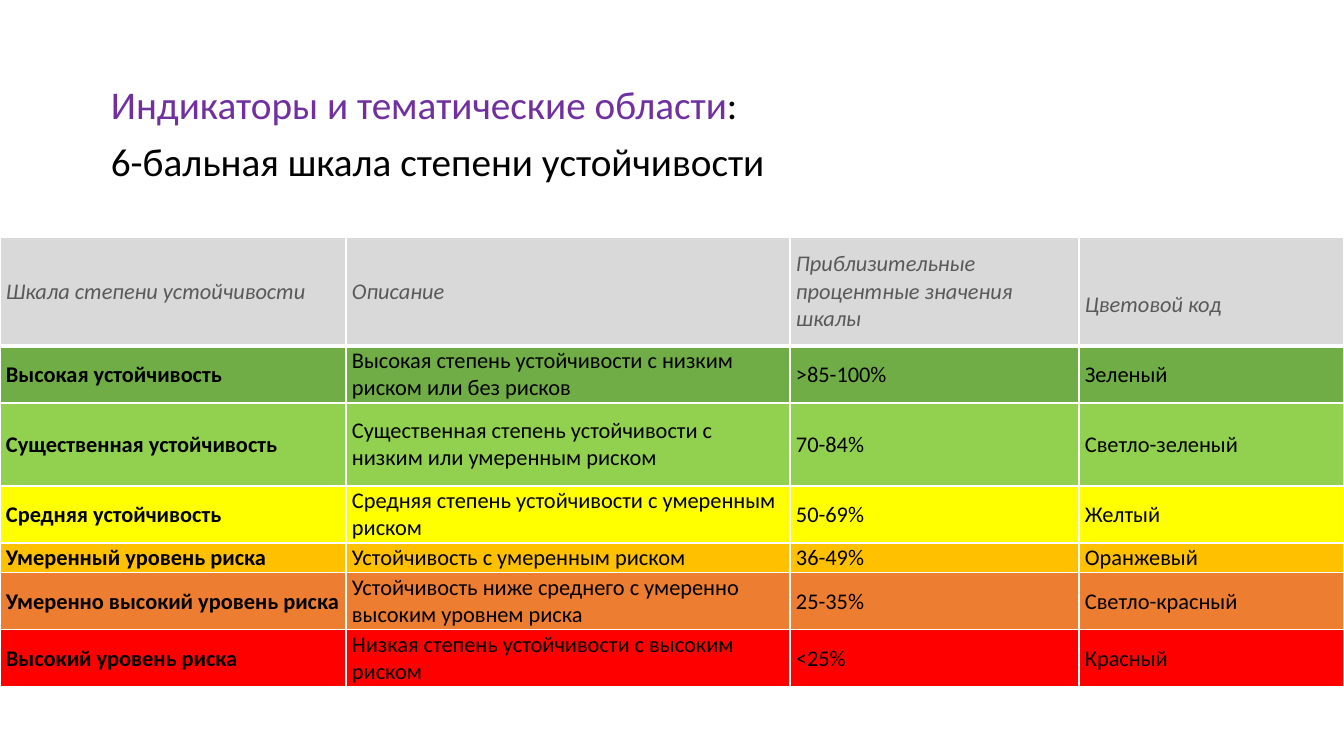
from lxml.etree import SubElement
from pptx import Presentation
from pptx.dml.color import RGBColor
from pptx.enum.text import MSO_ANCHOR
from pptx.oxml.ns import qn
from pptx.util import Emu, Pt

PX = 914400 / 100.8
FONT = "Calibri"
COLORS = {
    "black": "000000", "white": "FFFFFF", "purple": "7030A0",
    "header": "D9D9D9", "header_text": "595959",
    "green": "70AD47", "light_green": "92D050", "yellow": "FFFF00",
    "amber": "FFC000", "orange": "ED7D31", "red": "FF0000",
}


def px(length):
    return Emu(round(length * PX))


def add_span(para, text, size, color, bold=False, italic=False):
    span = para.add_run()
    span.text = text
    span.font.name = FONT
    span.font.size = Pt(size)
    span.font.bold = bold
    span.font.italic = italic
    span.font.color.rgb = RGBColor.from_string(COLORS[color])


deck = Presentation()
deck.slide_width, deck.slide_height = px(1344), px(756)
page = deck.slides.add_slide(deck.slide_layouts[6])

# Heading
heading = [
    [("Индикаторы и тематические области", "purple"), (":", "black")],
    [("6-бальная шкала степени устойчивости", "black")],
]
box = page.shapes.add_textbox(px(101), px(81), px(720), px(117))
frame = box.text_frame
frame.word_wrap = True
for index, spans in enumerate(heading):
    para = frame.add_paragraph() if index else frame.paragraphs[0]
    para.line_spacing = 0.9
    para.space_before = Pt(10)
    for text, color in spans:
        add_span(para, text, 28, color)

# Scale: fill, row height, cell texts
column_widths = [346, 444, 289, 265]
scale = [
    ("header", 109, ["Шкала степени устойчивости", "Описание",
                     "Приблизительные процентные значения шкалы", "Цветовой код"]),
    ("green", 57, ["Высокая устойчивость",
                   "Высокая степень устойчивости с низким риском или без рисков",
                   ">85-100%", "Зеленый"]),
    ("light_green", 83, ["Существенная устойчивость",
                         "Существенная степень устойчивости с низким или умеренным риском",
                         "70-84%", "Светло-зеленый"]),
    ("yellow", 57, ["Средняя устойчивость",
                    "Средняя степень устойчивости с умеренным риском",
                    "50-69%", "Желтый"]),
    ("amber", 30, ["Умеренный уровень риска", "Устойчивость с умеренным риском",
                   "36-49%", "Оранжевый"]),
    ("orange", 57, ["Умеренно высокий уровень риска",
                    "Устойчивость ниже среднего с умеренно высоким уровнем риска",
                    "25-35%", "Светло-красный"]),
    ("red", 57, ["Высокий уровень риска",
                 "Низкая степень устойчивости с высоким риском",
                 "<25%", "Красный"]),
]
table_height = sum(height for _, height, _ in scale)
table = page.shapes.add_table(len(scale), len(column_widths), 0, px(237),
                              px(sum(column_widths)), px(table_height)).table
table.first_row = False
table.horz_banding = False
for column, width in zip(table.columns, column_widths):
    column.width = px(width)

for row_index, (fill, height, texts) in enumerate(scale):
    table.rows[row_index].height = px(height)
    is_header = row_index == 0
    for column_index, text in enumerate(texts):
        cell = table.cell(row_index, column_index)
        cell.vertical_anchor = MSO_ANCHOR.MIDDLE
        cell.margin_left = cell.margin_right = px(6)
        cell.margin_top = cell.margin_bottom = 0
        add_span(cell.text_frame.paragraphs[0], text, 16,
                 "header_text" if is_header else "black",
                 bold=not is_header and column_index == 0, italic=is_header)

        # White borders, thicker under the header
        for side in ("lnL", "lnR", "lnT", "lnB"):
            under_header = (row_index, side) in ((0, "lnB"), (1, "lnT"))
            line = SubElement(cell._tc.get_or_add_tcPr(), qn(f"a:{side}"),
                              w=str(Pt(3 if under_header else 1)))
            solid = SubElement(line, qn("a:solidFill"))
            SubElement(solid, qn("a:srgbClr"), val=COLORS["white"])
        cell.fill.solid()
        cell.fill.fore_color.rgb = RGBColor.from_string(COLORS[fill])

# The last heading sits one half line lower than the others
table.cell(0, 3).margin_top = px(27)

deck.save("out.pptx")
